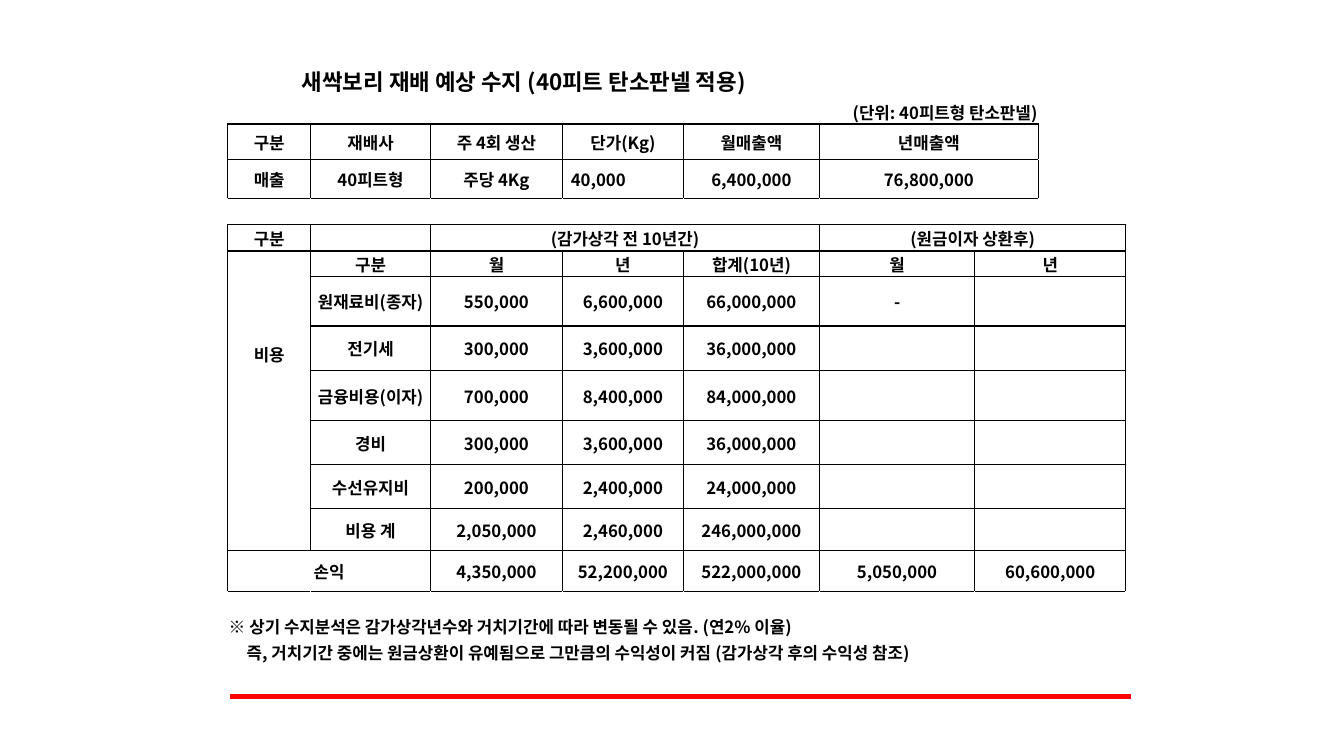
import pptx
import pptx.util
import pptx.dml.color
import pptx.enum.shapes
import pptx.enum.text
import pptx.oxml.ns
from lxml import etree

Pt = pptx.util.Pt
ALIGN = pptx.enum.text.PP_ALIGN
ANCHOR = pptx.enum.text.MSO_ANCHOR
BLACK = pptx.dml.color.RGBColor(0, 0, 0)
WHITE = pptx.dml.color.RGBColor(255, 255, 255)
RED = pptx.dml.color.RGBColor(255, 0, 0)

COLUMN_WIDTHS = [59.2, 85.6, 94.3, 86.4, 97.2, 110.9, 45.4, 62.6]
ROW_HEIGHTS = [26, 19.4, 25.2, 28.1, 18.7, 18.7, 18] + [31.7] * 5 + [29.5] * 2 + [15.8, 18, 18.7]
ROWS = [
    ["새싹보리 재배 예상 수지 (40피트 탄소판넬 적용)"],
    ["", "", "", "", "(단위: 40피트형 탄소판넬)"],
    ["구분", "재배사", "주 4회 생산", "단가(Kg)", "월매출액", "년매출액"],
    ["매출", "40피트형", "주당 4Kg", "40,000", "6,400,000", "76,800,000"],
    [],
    ["구분", "", "(감가상각 전 10년간)", "", "", "(원금이자 상환후)"],
    ["비용", "구분", "월", "년", "합계(10년)", "월", "년"],
    ["", "원재료비(종자)", "550,000", "6,600,000", "66,000,000", "-"],
    ["", "전기세", "300,000", "3,600,000", "36,000,000"],
    ["", "금융비용(이자)", "700,000", "8,400,000", "84,000,000"],
    ["", "경비", "300,000", "3,600,000", "36,000,000"],
    ["", "수선유지비", "200,000", "2,400,000", "24,000,000"],
    ["", "비용 계", "2,050,000", "2,460,000", "246,000,000"],
    ["손익", "", "4,350,000", "52,200,000", "522,000,000", "5,050,000", "60,600,000"],
    [],
    ["※ 상기 수지분석은 감가상각년수와 거치기간에 따라 변동될 수 있음. (연2% 이율)"],
    ["즉, 거치기간 중에는 원금상환이 유예됨으로 그만큼의 수익성이 커짐 (감가상각 후의 수익성 참조)"],
]
MERGES = [
    (0, 0, 0, 4), (0, 5, 0, 6), (1, 4, 1, 6),
    (2, 5, 2, 6), (3, 5, 3, 6), (4, 5, 4, 6),
    (5, 2, 5, 4), (5, 5, 5, 7), (6, 0, 12, 0), (13, 0, 13, 1),
    (15, 0, 15, 7), (16, 0, 16, 7),
] + [(row, 6, row, 7) for row in range(6, 15)]


def is_ruled(row, column):
    return (2 <= row <= 3 and 0 <= column <= 6) or (5 <= row <= 13 and 0 <= column <= 7)


class BudgetSlide:
    font = "Noto Sans CJK KR"
    size = 12
    line_width = 1

    def __init__(self, deck):
        self.page = deck.slides.add_slide(deck.slide_layouts[6])

    def line(self, left, top, right, color, width):
        rule = self.page.shapes.add_connector(
            pptx.enum.shapes.MSO_CONNECTOR.STRAIGHT, Pt(left), Pt(top), Pt(right), Pt(top))
        rule.line.color.rgb = color
        rule.line.width = Pt(width)
        etree.SubElement(rule._element.spPr, pptx.oxml.ns.qn("a:effectLst"))

    def border(self, cell, side, color):
        qn = pptx.oxml.ns.qn
        edge = etree.SubElement(cell._tc.get_or_add_tcPr(), qn("a:ln" + side),
                                w=str(Pt(self.line_width)))
        fill = etree.SubElement(edge, qn("a:solidFill"))
        etree.SubElement(fill, qn("a:srgbClr"), val=str(color))

    def label(self, cell, text):
        cell.margin_left = cell.margin_right = cell.margin_top = Pt(0.7)
        cell.margin_bottom = Pt(0)
        cell.vertical_anchor = ANCHOR.MIDDLE
        para = cell.text_frame.paragraphs[0]
        para.alignment = ALIGN.CENTER
        if not text:
            etree.SubElement(para._p, pptx.oxml.ns.qn("a:endParaRPr"), sz=str(self.size * 100))
            return
        para.text = text
        span = para.runs[0]
        span.font.name = self.font
        span.font.size = Pt(self.size)
        span.font.bold = True
        span.font.color.rgb = BLACK
        etree.SubElement(span.font._element, pptx.oxml.ns.qn("a:ea"), typeface=self.font)

    def table(self, left, top):
        frame = self.page.shapes.add_table(
            len(ROW_HEIGHTS), len(COLUMN_WIDTHS), Pt(left), Pt(top),
            Pt(sum(COLUMN_WIDTHS)), Pt(sum(ROW_HEIGHTS)))
        table = frame.table
        table.first_row = table.horz_banding = False
        for column, width in zip(table.columns, COLUMN_WIDTHS):
            column.width = Pt(width)
        for row, height in zip(table.rows, ROW_HEIGHTS):
            row.height = Pt(height)
        sides = {"L": (0, -1), "R": (0, 1), "T": (-1, 0), "B": (1, 0)}
        for row, texts in enumerate(ROWS):
            for column in range(len(COLUMN_WIDTHS)):
                cell = table.cell(row, column)
                self.label(cell, texts[column] if column < len(texts) else "")
                for side, (down, across) in sides.items():
                    ruled = is_ruled(row, column) or is_ruled(row + down, column + across)
                    self.border(cell, side, BLACK if ruled else WHITE)
                cell.fill.background()
        for first_row, first_column, last_row, last_column in MERGES:
            table.cell(first_row, first_column).merge(table.cell(last_row, last_column))
        return table


def main():
    deck = pptx.Presentation()
    deck.slide_width, deck.slide_height = Pt(960), Pt(540)
    budget = BudgetSlide(deck)
    budget.line(164.2, 497.5, 807.8, RED, 3)
    table = budget.table(162.7, 43.2)

    title, unit = table.cell(0, 0), table.cell(1, 4)
    title.vertical_anchor = unit.vertical_anchor = ANCHOR.BOTTOM
    title.text_frame.paragraphs[0].runs[0].font.size = Pt(16)
    unit.text_frame.paragraphs[0].alignment = ALIGN.RIGHT

    price, first_note, second_note = table.cell(3, 3), table.cell(15, 0), table.cell(16, 0)
    for cell in (price, first_note, second_note):
        cell.text_frame.paragraphs[0].alignment = ALIGN.LEFT
    price.margin_left = Pt(6)
    second_note.margin_left = Pt(13.5)

    cost = table.cell(6, 0)
    cost.vertical_anchor = ANCHOR.TOP
    cost.margin_top = Pt(65)
    deck.save("out.pptx")


if __name__ == "__main__":
    main()
